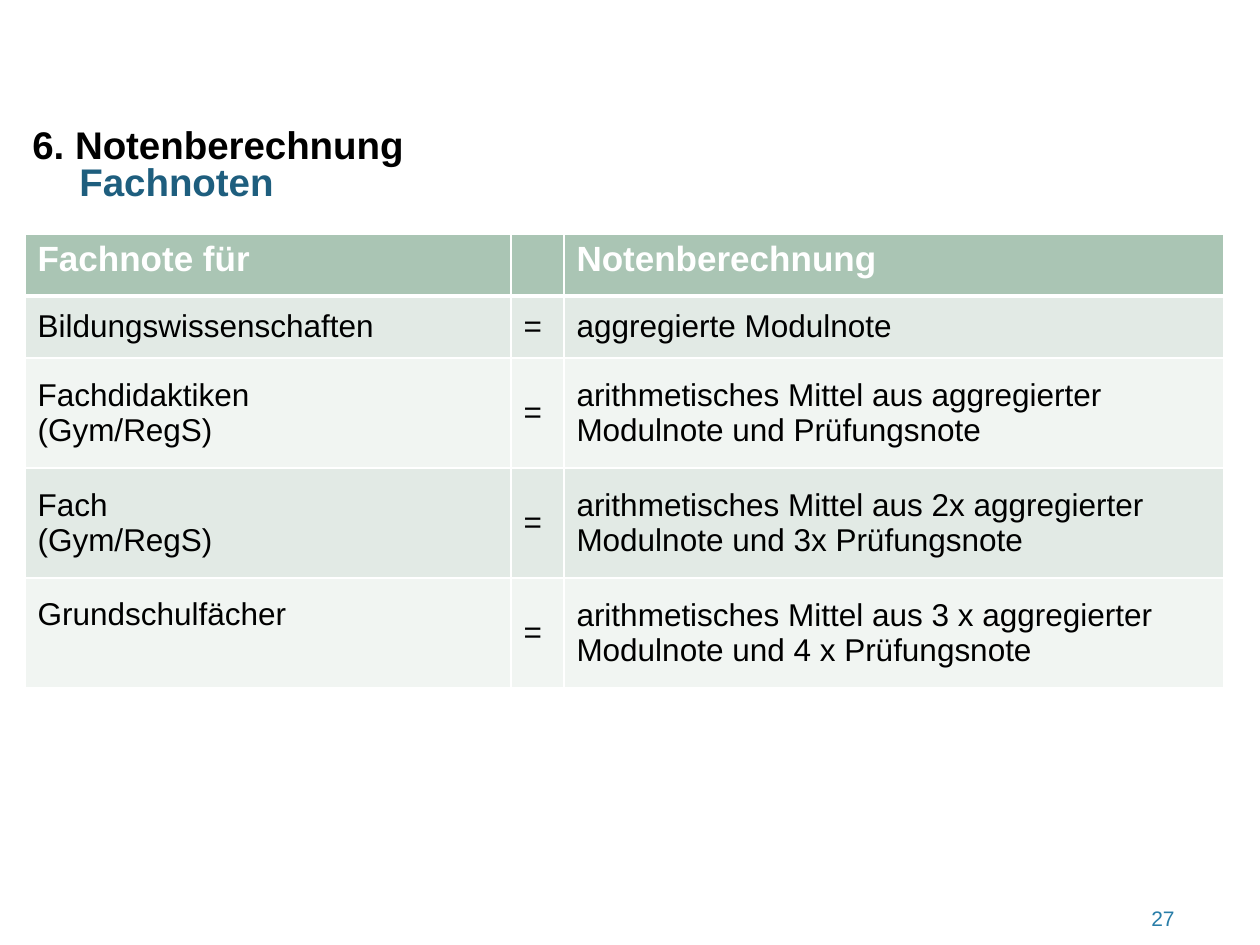
from dataclasses import dataclass

from lxml.etree import SubElement
from pptx import Presentation
from pptx.dml.color import RGBColor
from pptx.enum.text import MSO_ANCHOR, PP_ALIGN
from pptx.oxml.ns import qn
from pptx.util import Emu, Pt

PX = 914400 // 126
FONT = "Arial"
COLORS = {
    "black": "000000",
    "white": "FFFFFF",
    "subtitle": "1E5E7E",
    "number": "287DA8",
    "header": "AAC5B4",
    "band_dark": "E2EAE5",
    "band_light": "F1F5F2",
}


@dataclass
class Label:
    text: str
    left: int
    top: int
    width: int
    height: int
    size: int
    color: str
    bold: bool = True
    align: PP_ALIGN = PP_ALIGN.LEFT
    margin_top: int = 6


@dataclass
class Row:
    height: int
    cells: tuple[str, str, str]


LABELS = [
    Label("6. Notenberechnung", 20, 106, 635, 69, 22, "black", margin_top=15),
    Label("27", 1070, 882, 117, 42, 12, "number", False, PP_ALIGN.RIGHT, 23),
    Label("Fachnoten", 67, 152, 223, 55, 22, "subtitle"),
]
TABLE_LEFT, TABLE_TOP = 25, 234
COLUMNS = [486, 53, 660]
ROWS = [
    Row(62, ("Fachnote für", "", "Notenberechnung")),
    Row(62, ("Bildungswissenschaften", "=", "aggregierte Modulnote")),
    Row(110, ("Fachdidaktiken\n(Gym/RegS)", "=",
              "arithmetisches Mittel aus aggregierter Modulnote und Prüfungsnote")),
    Row(110, ("Fach\n(Gym/RegS)", "=",
              "arithmetisches Mittel aus 2x aggregierter Modulnote und 3x Prüfungsnote")),
    Row(110, ("Grundschulfächer", "=",
              "arithmetisches Mittel aus 3 x aggregierter Modulnote und 4 x Prüfungsnote")),
]


def px(n: int) -> Emu:
    return Emu(n * PX)


def rgb(name: str) -> RGBColor:
    return RGBColor.from_string(COLORS[name])


def write(tf, text: str, size: int, color: str, bold: bool,
          align: PP_ALIGN = PP_ALIGN.LEFT) -> None:
    """Write one paragraph per line of text."""
    for i, line in enumerate(text.split("\n")):
        p = tf.add_paragraph() if i else tf.paragraphs[0]
        p.alignment = align
        if not line:
            continue
        r = p.add_run()
        r.text = line
        r.font.name = FONT
        r.font.size = Pt(size)
        r.font.bold = bold
        r.font.color.rgb = rgb(color)


def add_label(slide, label: Label) -> None:
    sp = slide.shapes.add_textbox(px(label.left), px(label.top),
                                  px(label.width), px(label.height))
    tf = sp.text_frame
    tf.word_wrap = True
    tf.margin_top = px(label.margin_top)
    write(tf, label.text, label.size, label.color, label.bold, label.align)


def set_borders(cell, top: int, bottom: int) -> None:
    """Draw white borders; widths in points, sides always 1."""
    tc_pr = cell._tc.get_or_add_tcPr()
    widths = {"a:lnL": 1, "a:lnR": 1, "a:lnT": top, "a:lnB": bottom}
    for i, (tag, width) in enumerate(widths.items()):
        ln = SubElement(tc_pr, qn(tag), w=str(Pt(width)))
        fill = SubElement(ln, qn("a:solidFill"))
        SubElement(fill, qn("a:srgbClr"), val=COLORS["white"])
        tc_pr.insert(i, ln)


def add_grade_table(slide) -> None:
    frame = slide.shapes.add_table(
        len(ROWS), len(COLUMNS), px(TABLE_LEFT), px(TABLE_TOP),
        px(sum(COLUMNS)), px(sum(row.height for row in ROWS)))
    table = frame.table
    table.first_row = table.horz_banding = False
    for column, width in zip(table.columns, COLUMNS):
        column.width = px(width)
    for i, row in enumerate(ROWS):
        table.rows[i].height = px(row.height)
        header = i == 0
        band = "header" if header else "band_dark" if i % 2 else "band_light"
        for j, text in enumerate(row.cells):
            cell = table.cell(i, j)
            cell.fill.solid()
            cell.fill.fore_color.rgb = rgb(band)
            cell.vertical_anchor = MSO_ANCHOR.TOP if header else MSO_ANCHOR.MIDDLE
            set_borders(cell, top=3 if i == 1 else 1, bottom=3 if header else 1)
            write(cell.text_frame, text, 20 if header else 18,
                  "white" if header else "black", header)

    # Last subject lines up with the first line of its formula
    last = table.cell(len(ROWS) - 1, 0)
    last.vertical_anchor = MSO_ANCHOR.TOP
    last.margin_top = px(19)


def main() -> None:
    prs = Presentation()
    prs.slide_width, prs.slide_height = px(1260), px(945)
    slide = prs.slides.add_slide(prs.slide_layouts[6])

    # Title, subtitle and page number
    for label in LABELS:
        add_label(slide, label)

    # Grade calculation table
    add_grade_table(slide)
    prs.save("out.pptx")


if __name__ == "__main__":
    main()
